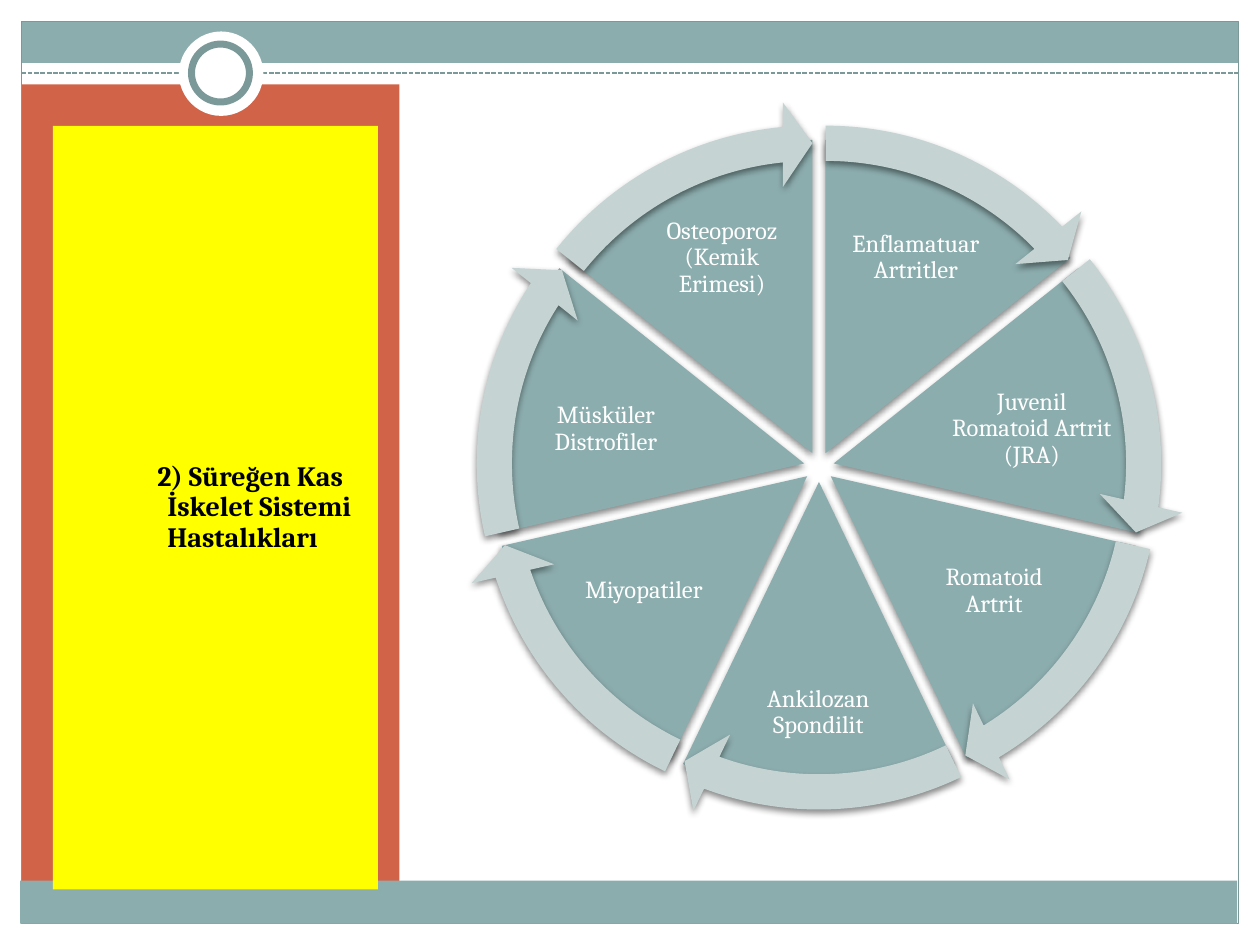
from math import cos, pi, sin

from lxml.etree import SubElement
from pptx import Presentation
from pptx.dml.color import RGBColor
from pptx.enum.dml import MSO_LINE
from pptx.enum.shapes import MSO_CONNECTOR, MSO_SHAPE
from pptx.enum.text import MSO_ANCHOR, PP_ALIGN
from pptx.oxml.ns import qn
from pptx.util import Inches, Pt

TEAL = RGBColor(0x8C, 0xAD, 0xAE)
PALE = RGBColor(0xC5, 0xD3, 0xD3)
EDGE = RGBColor(0x7C, 0x99, 0x9A)
RUST = RGBColor(0xD1, 0x63, 0x49)
YELLOW = RGBColor(0xFF, 0xFF, 0x00)
WHITE = RGBColor(0xFF, 0xFF, 0xFF)
BLACK = RGBColor(0, 0, 0)

COLS, ROWS = 100, 75
CELL = Inches(0.1)
HUB = (65, 37.05)
GAP = 1.2
TURN, TOP = 216, 162

PARTS = [
    ("Enflamatuar Artritler", (66.8, 15.7, 11.8, 9.5)),
    ("Juvenil Romatoid Artrit (JRA)", (75.1, 29.9, 13.6, 8.3)),
    ("Romatoid Artrit", (73, 42.3, 11.8, 9.2)),
    ("Ankilozan Spondilit", (59.2, 52.4, 11.5, 8.3)),
    ("Miyopatiler", (45.2, 42.3, 11.8, 9.2)),
    ("Müsküler Distrofiler", (41.3, 29.9, 13.6, 8.3)),
    ("Osteoporoz (Kemik Erimesi)", (51.4, 15.7, 11.8, 9.5)),
]


def span(*cells):
    """Turn grid cells into lengths."""
    return [round(n * CELL) for n in cells]


def draw(shapes, kind, box, fill=None, line=None, width=0.75):
    """Add a preset shape on the grid."""
    shape = shapes.add_shape(kind, *span(*box))
    shape.shadow.inherit = False
    if fill is None:
        shape.fill.background()
    else:
        shape.fill.solid()
        shape.fill.fore_color.rgb = fill
    if line is None:
        shape.line.fill.background()
    else:
        shape.line.color.rgb = line
        shape.line.width = Pt(width)
    return shape


def write(shape, text, size=14, color=WHITE, bold=False,
          align=PP_ALIGN.CENTER, inset=0.2, left=0, first=0):
    """Set one formatted paragraph in a shape."""
    frame = shape.text_frame
    frame.word_wrap = True
    frame.vertical_anchor = MSO_ANCHOR.MIDDLE
    pad, left, first = span(inset, left, first)
    frame.margin_left = frame.margin_right = pad
    frame.margin_top = frame.margin_bottom = pad
    para = frame.paragraphs[0]
    para.alignment = align
    para.line_spacing = 0.9
    props = para._p.get_or_add_pPr()
    props.set("marL", str(left))
    props.set("indent", str(first))
    run = para.add_run()
    run.text = text
    font = run.font
    font.name, font.size, font.bold = "Cambria", Pt(size), bold
    font.color.rgb = color


def shade(shape):
    """Give a shape a soft shadow below it."""
    effects = shape._element.spPr.find(qn("a:effectLst"))
    outer = SubElement(effects, qn("a:outerShdw"), blurRad=str(Pt(4)),
                       dist=str(Pt(2)), dir="5400000", rotWithShape="0")
    color = SubElement(outer, qn("a:srgbClr"), val=str(BLACK))
    SubElement(color, qn("a:alpha"), val="45000")


def sector(shapes, kind, index, size, fill, values):
    """Add a shaded ring part, pushed out from the hub."""
    angle = 2 * pi * (index + 0.5) / len(PARTS)
    left = HUB[0] + GAP * sin(angle) - size / 2
    top = HUB[1] - GAP * cos(angle) - size / 2
    shape = draw(shapes, kind, (left, top, size, size), fill)
    for place, value in enumerate(values):
        shape.adjustments[place] = value
    shade(shape)


def rule(shapes, start, end):
    """Add the dashed line under the top band."""
    line = shapes.add_connector(MSO_CONNECTOR.STRAIGHT, *span(*start, *end))
    line.line.color.rgb = EDGE
    line.line.width = Pt(0.9)
    line.line.dash_style = MSO_LINE.SQUARE_DOT
    SubElement(line._element.spPr, qn("a:effectLst"))


def frame(shapes):
    """Draw the bands, side panel, border and ring."""
    rect, oval = MSO_SHAPE.RECTANGLE, MSO_SHAPE.OVAL
    draw(shapes, rect, (1.7, 1.7, 96.6, 3.3), TEAL)
    draw(shapes, rect, (1.7, 6.7, 30, 64.2), RUST)
    draw(shapes, rect, (1.7, 1.7, 96.6, 71.6), line=EDGE)
    rule(shapes, (1.7, 5.8), (98.3, 5.8))
    draw(shapes, oval, (14.2, 2.5, 6.7, 6.7), WHITE)
    draw(shapes, oval, (15.2, 3.5, 4.6, 4.6), WHITE, EDGE, 4)
    draw(shapes, rect, (1.6, 69.9, 96.6, 3.4), TEAL)


def wheel(shapes):
    """Draw the cycle of wedges, labels and arrows."""
    step = TURN / len(PARTS)
    starts = [(TOP + step * i) % TURN for i in range(len(PARTS))]
    for i, (text, box) in enumerate(PARTS):
        ends = (starts[i], (starts[i] + step) % TURN)
        sector(shapes, MSO_SHAPE.PIE, i, 49.7, TEAL, ends)
        write(shapes.add_textbox(*span(*box)), text)
    for i, start in enumerate(starts):
        tip = (start + step - 3.28) % TURN
        values = (0.05, 3.28, tip, start, 0.06)
        sector(shapes, MSO_SHAPE.CIRCULAR_ARROW, i, 55.9, PALE, values)


def main():
    """Build the slide and save it."""
    deck = Presentation()
    deck.slide_width, deck.slide_height = span(COLS, ROWS)
    shapes = deck.slides.add_slide(deck.slide_layouts[6]).shapes
    frame(shapes)
    title = draw(shapes, MSO_SHAPE.RECTANGLE, (4.2, 10, 25.8, 60.6), YELLOW)
    write(title, "2) Süreğen Kas İskelet Sistemi Hastalıkları", size=16,
          color=BLACK, bold=True, align=PP_ALIGN.LEFT, inset=1,
          left=8.1, first=-0.8)
    wheel(shapes.add_group_shape().shapes)
    deck.save("out.pptx")


if __name__ == "__main__":
    main()
